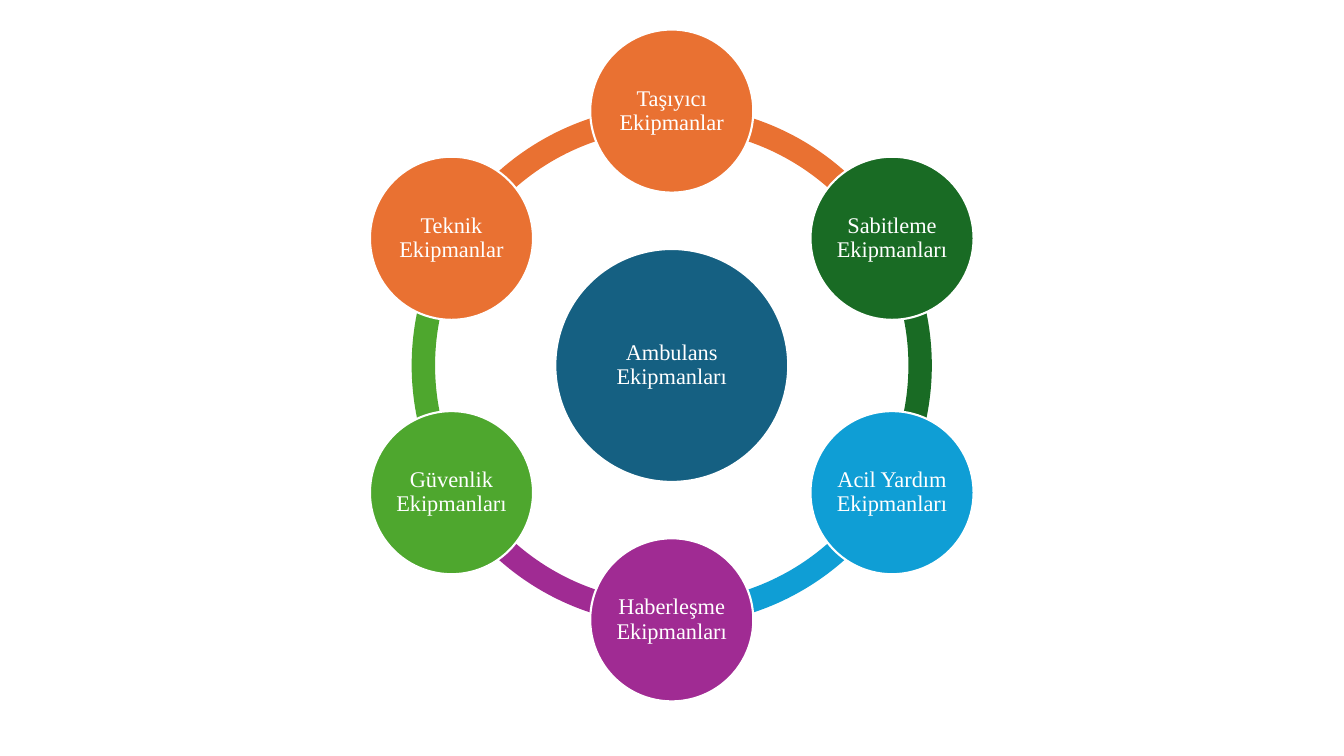
from math import cos, radians, sin

from pptx import Presentation
from pptx.dml.color import RGBColor
from pptx.enum.shapes import MSO_SHAPE
from pptx.enum.text import MSO_ANCHOR, PP_ALIGN
from pptx.util import Cm, Pt

ARC, CIRCLE = MSO_SHAPE.BLOCK_ARC, MSO_SHAPE.OVAL
MIDDLE, CENTER = MSO_ANCHOR.MIDDLE, PP_ALIGN.CENTER

THEME = {
    "white": RGBColor.from_string("FFFFFF"),
    "hub": "156082",
    "orange": "E97132",
    "dark_green": "196B24",
    "blue": "0F9ED5",
    "purple": "A02B93",
    "green": "4EA72E",
    "font": "Times New Roman",
    "size": Pt(16),
    "outline": Pt(1.5),
}
FRAME = {"word_wrap": True, "vertical_anchor": MIDDLE, "margin_left": 0,
         "margin_right": 0, "margin_top": 0, "margin_bottom": 0}
PARAGRAPH = {"alignment": CENTER, "line_spacing": 0.9}
FONT = {"name": THEME["font"], "size": THEME["size"]}

# Ring geometry in centimetres, angles in degrees clockwise from the right
CX, CY = 16.93, 9.21
ORBIT, RING_D, NODE_D, HUB_D = 6.41, 13.11, 4.11, 5.87
START, DEGREE = -90, 0.6  # one degree in units of a shape adjustment

NODES = [
    ("Taşıyıcı Ekipmanlar", "orange"),
    ("Sabitleme Ekipmanları", "dark_green"),
    ("Acil Yardım Ekipmanları", "blue"),
    ("Haberleşme Ekipmanları", "purple"),
    ("Güvenlik Ekipmanları", "green"),
    ("Teknik Ekipmanlar", "orange"),
]
STEP = 360 / len(NODES)


def add_round(kind, x, y, diameter, color):
    sp = s.shapes.add_shape(kind, Cm(x - diameter / 2), Cm(y - diameter / 2),
                            Cm(diameter), Cm(diameter))
    sp.shadow.inherit = False
    sp.fill.solid()
    sp.fill.fore_color.rgb = RGBColor.from_string(THEME[color])
    sp.line.fill.background()
    return sp


def add_circle(x, y, diameter, color, text):
    sp = add_round(CIRCLE, x, y, diameter, color)
    sp.line.color.rgb = THEME["white"]
    sp.line.width = THEME["outline"]
    tf = sp.text_frame
    p = tf.paragraphs[0]
    r = p.add_run()
    r.text = text
    r.font.color.rgb = THEME["white"]
    for target, values in ((tf, FRAME), (p, PARAGRAPH), (r.font, FONT)):
        for key, value in values.items():
            setattr(target, key, value)


prs = Presentation()
prs.slide_width, prs.slide_height = Cm(33.87), Cm(19.05)
s = prs.slides.add_slide(prs.slide_layouts[6])

# Ring arcs, each running from its node to the next
for i, (_, color) in reversed(list(enumerate(NODES))):
    arc = add_round(ARC, CX, CY, RING_D, color)
    angle = START + i * STEP
    arc.adjustments[0] = angle % 360 * DEGREE
    arc.adjustments[1] = (angle + STEP) % 360 * DEGREE
    arc.adjustments[2] = 0.045

# Hub
add_circle(CX, CY, HUB_D, "hub", "Ambulans Ekipmanları")

# Nodes around the hub
for i, (text, color) in enumerate(NODES):
    angle = radians(START + i * STEP)
    add_circle(CX + ORBIT * cos(angle), CY + ORBIT * sin(angle), NODE_D, color, text)

prs.save("out.pptx")
